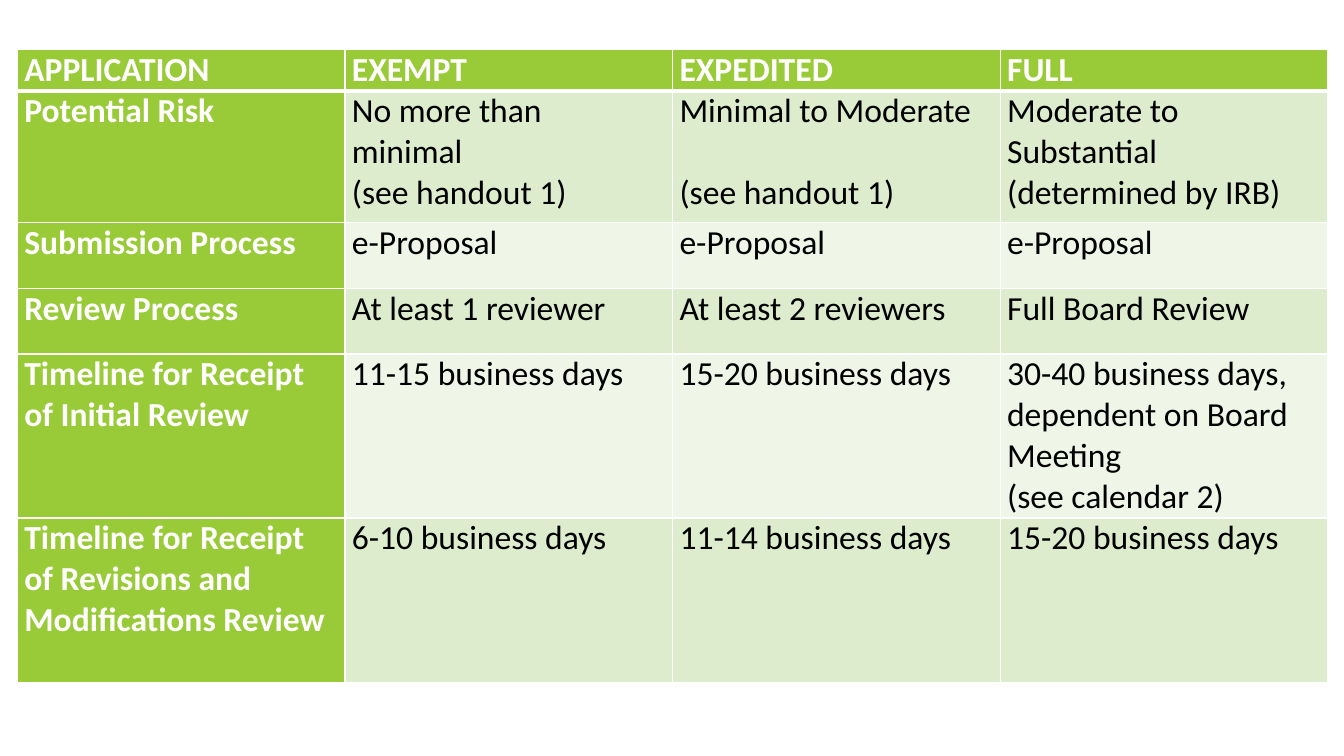
import pptx
import pptx.dml.color
import pptx.oxml
import pptx.oxml.ns
import pptx.util

Pt = pptx.util.Pt

ROWS = [
    ["APPLICATION", "EXEMPT", "EXPEDITED", "FULL"],
    ["Potential Risk", "No more than minimal\n(see handout 1)",
     "Minimal to Moderate\n(see handout 1)",
     "Moderate to Substantial\n(determined by IRB)"],
    ["Submission Process", "e-Proposal", "e-Proposal", "e-Proposal"],
    ["Review Process", "At least 1 reviewer", "At least 2 reviewers",
     "Full Board Review"],
    ["Timeline for Receipt of Initial Review", "11-15 business days",
     "15-20 business days",
     "30-40 business days, dependent on Board Meeting\n(see calendar 2)"],
    ["Timeline for Receipt of Revisions and Modifications Review",
     "6-10 business days", "11-14 business days", "15-20 business days"],
]
HEIGHTS = [24, 94.3, 46.8, 46.8, 94.3, 117.5]
LEFT, TOP, COL_WIDTH = 12.4, 35.6, 234
FONT, SIZE, LINE = "Calibri", 24, 29.3
MARGIN, WRAP_MARGIN = 5, 12
GREEN, BANDS = "99CB38", ["EFF6E8", "DEECCE"]
WHITE, BLACK = "FFFFFF", "000000"
EXEMPT_RISK, EXPEDITED_RISK = (1, 1), (1, 2)


def rgb(value):
    return pptx.dml.color.RGBColor.from_string(value)


def set_borders(cell, widths):
    tc_pr = cell._tc.get_or_add_tcPr()
    for i, (side, width) in enumerate(widths.items()):
        ln = pptx.oxml.parse_xml(
            f'<a:ln{side} {pptx.oxml.ns.nsdecls("a")} w="{Pt(width)}">'
            f'<a:solidFill><a:srgbClr val="{WHITE}"/></a:solidFill></a:ln{side}>')
        tc_pr.insert(i, ln)


def fill_cell(cell, text, row, col):
    label = row == 0 or col == 0
    cell.fill.solid()
    cell.fill.fore_color.rgb = rgb(GREEN if label else BANDS[row % 2])
    cell.margin_left = Pt(MARGIN)
    cell.margin_right = Pt(WRAP_MARGIN if (row, col) == EXEMPT_RISK else MARGIN)
    cell.margin_top = cell.margin_bottom = 0
    set_borders(cell, {"L": 1, "R": 1, "T": 1, "B": 3 if row == 0 else 1})
    tf = cell.text_frame
    tf.text = text
    for p in tf.paragraphs:
        for r in p.runs:
            r.font.name, r.font.size, r.font.bold = FONT, Pt(SIZE), label
            r.font.color.rgb = rgb(WHITE if label else BLACK)
    if (row, col) == EXPEDITED_RISK:
        tf.paragraphs[1].space_before = Pt(LINE)


def main():
    prs = pptx.Presentation()
    prs.slide_width, prs.slide_height = Pt(960), Pt(540)
    slide = prs.slides.add_slide(prs.slide_layouts[6])
    cols = len(ROWS[0])
    table = slide.shapes.add_table(
        len(ROWS), cols, Pt(LEFT), Pt(TOP),
        Pt(COL_WIDTH * cols), Pt(sum(HEIGHTS))).table
    for column in table.columns:
        column.width = Pt(COL_WIDTH)
    for row, (texts, height) in enumerate(zip(ROWS, HEIGHTS)):
        table.rows[row].height = Pt(height)
        for col, text in enumerate(texts):
            fill_cell(table.cell(row, col), text, row, col)
    prs.save("out.pptx")


if __name__ == "__main__":
    main()
